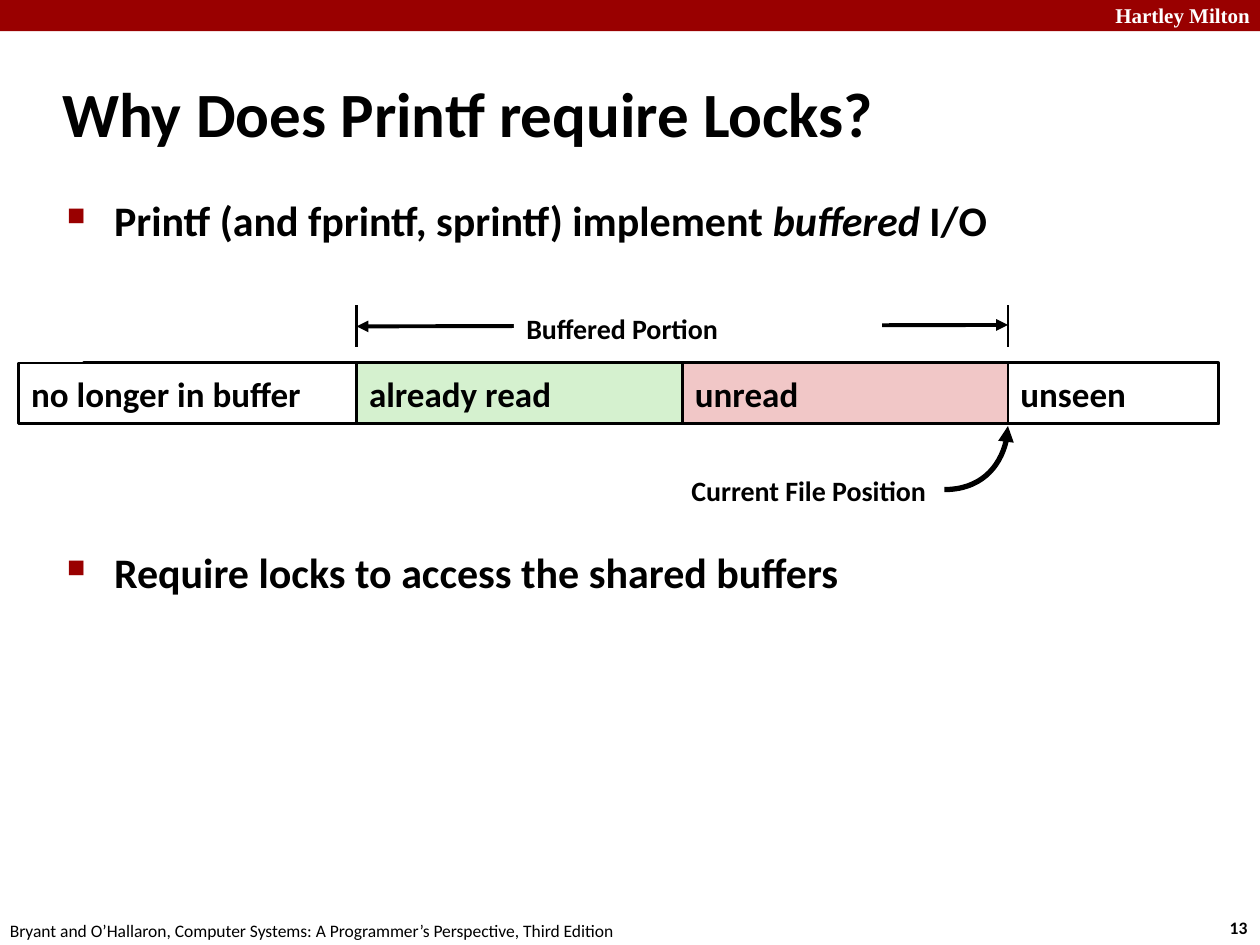
from dataclasses import dataclass
from typing import Optional

import pptx
import pptx.dml.color
import pptx.enum.shapes
import pptx.enum.text
import pptx.oxml
import pptx.oxml.ns
import pptx.util
from lxml import etree

Cm = pptx.util.Cm
Pt = pptx.util.Pt
qn = pptx.oxml.ns.qn
ALIGN = pptx.enum.text.PP_ALIGN
ANCHOR = pptx.enum.text.MSO_ANCHOR
RECTANGLE = pptx.enum.shapes.MSO_SHAPE.RECTANGLE

COLORS = {"red": "990000", "black": "000000", "white": "FFFFFF",
          "unread": "F1C7C7", "read": "D5F1CF"}
BUFFER_TOP, BUFFER_HEIGHT = 7.32, 1.22
EDGES = [0.38, 7.19, 13.76, 20.32, 24.56]


@dataclass
class Box:
    left: float
    top: float
    width: float
    height: float
    text: str = ""
    size: float = 20
    bold: bool = True
    color: str = "black"
    font: str = "Calibri"
    align: ALIGN = ALIGN.LEFT
    anchor: ANCHOR = ANCHOR.TOP
    wrap: bool = True
    fill: Optional[str] = None
    line: float = 0


@dataclass
class Line:
    start: tuple
    end: tuple
    width: float
    arrows: tuple = ()


def rgb(name: str) -> pptx.dml.color.RGBColor:
    return pptx.dml.color.RGBColor.from_string(COLORS[name])


def set_values(target, values: dict) -> None:
    for name, value in values.items():
        setattr(target, name, value)


def add_run(paragraph, text: str, size: float, color: str = "black",
            font: str = "Calibri", bold: bool = True, italic: bool = False) -> None:
    run = paragraph.add_run()
    run.text = text
    set_values(run.font, {"size": Pt(size), "name": font, "bold": bold, "italic": italic})
    run.font.color.rgb = rgb(color)


def set_line(shape, width: float, arrows: tuple = ()) -> None:
    shape.line.color.rgb = rgb("black")
    shape.line.width = Pt(width)
    for end in arrows:
        etree.SubElement(shape.line._get_or_add_ln(), qn(f"a:{end}"), type="triangle")


def draw_box(slide, box: Box):
    place = [Cm(v) for v in (box.left, box.top, box.width, box.height)]
    if box.fill or box.line:
        shape = slide.shapes.add_shape(RECTANGLE, *place)
        shape.shadow.inherit = False
        if box.fill:
            shape.fill.solid()
            shape.fill.fore_color.rgb = rgb(box.fill)
        else:
            shape.fill.background()
        if box.line:
            set_line(shape, box.line)
        else:
            shape.line.fill.background()
    else:
        shape = slide.shapes.add_textbox(*place)
    set_values(shape.text_frame, {"word_wrap": box.wrap, "vertical_anchor": box.anchor})
    if box.text:
        paragraph = shape.text_frame.paragraphs[0]
        paragraph.alignment = box.align
        add_run(paragraph, box.text, box.size, box.color, box.font, box.bold)
    return shape


def draw_line(slide, line: Line) -> None:
    points = [Cm(v) for v in (*line.start, *line.end)]
    connector = slide.shapes.add_connector(
        pptx.enum.shapes.MSO_CONNECTOR.STRAIGHT, *points)
    set_line(connector, line.width, line.arrows)
    etree.SubElement(connector._element.spPr, qn("a:effectLst"))


def draw_curve(slide, tip: tuple, radius: float) -> None:
    """Quarter arc from the arrow tip down and to the left."""
    x, y, r = Cm(tip[0]), Cm(tip[1]), Cm(radius)
    builder = slide.shapes.build_freeform(x, y)
    builder.add_line_segments([(x - r, y + r)], close=False)
    shape = builder.convert_to_shape()
    shape.shadow.inherit = False
    shape.fill.background()
    set_line(shape, 3, ("headEnd",))
    segment = next(shape._element.iter(qn("a:lnTo")))
    curve = etree.Element(qn("a:cubicBezTo"))
    for px, py in ((r, 0.55 * r), (0.55 * r, r), (0, r)):
        etree.SubElement(curve, qn("a:pt"), x=str(int(px)), y=str(int(py)))
    segment.getparent().replace(segment, curve)


def set_indent(paragraph, indent: float) -> None:
    properties = paragraph._p.get_or_add_pPr()
    properties.set("marL", str(Cm(indent)))
    properties.set("indent", str(-Cm(indent)))


def add_bullet(paragraph, runs: list, space_before: float) -> None:
    paragraph.space_before = Pt(space_before)
    set_indent(paragraph, 0.95)
    properties = paragraph._p.get_or_add_pPr()
    color = etree.SubElement(properties, qn("a:buClr"))
    etree.SubElement(color, qn("a:srgbClr"), val=COLORS["red"])
    etree.SubElement(properties, qn("a:buSzPct"), val="60000")
    etree.SubElement(properties, qn("a:buChar"), char="■")
    for text, italic in runs:
        add_run(paragraph, text, 24, italic=italic)


def main() -> None:
    presentation = pptx.Presentation()
    set_values(presentation, {"slide_width": Cm(25.4), "slide_height": Cm(19.05)})
    slide = presentation.slides.add_slide(presentation.slide_layouts[5])

    # Header and footer
    for box in (
        Box(0, 0, 25.4, 0.63, fill="red"),
        Box(21.95, -0.08, 3.5, 0.76, "Hartley Milton", 12, color="white",
            font="Times New Roman", align=ALIGN.RIGHT),
        Box(24.54, 18.36, 0.94, 0.69, "13", 10, wrap=False),
        Box(-0.05, 18.42, 12.9, 0.69, "Bryant and O’Hallaron, Computer Systems: "
            "A Programmer’s Perspective, Third Edition", 10, bold=False, wrap=False),
    ):
        draw_box(slide, box)

    # Title
    title = slide.shapes.title
    set_values(title, {"left": Cm(1), "top": Cm(1.22), "width": Cm(21.08), "height": Cm(2.1)})
    set_values(title.text_frame, {"vertical_anchor": ANCHOR.MIDDLE, "word_wrap": True})
    heading = title.text_frame.paragraphs[0]
    heading.alignment = ALIGN.LEFT
    set_indent(heading, 0.32)
    add_run(heading, "Why Does Printf require Locks?", 36)

    # Bullets, with room for the diagram between them
    body = draw_box(slide, Box(1.1, 3.8, 21.95, 1.93)).text_frame
    add_bullet(body.paragraphs[0], [("Printf (and fprintf, sprintf) implement ", False),
                                    ("buffered", True), (" I/O", False)], 0)
    add_bullet(body.add_paragraph(),
               [("Require locks to access the shared buffers", False)], 172)

    # Buffer: an outline and its four sections
    draw_box(slide, Box(1.7, BUFFER_TOP, 22.86, BUFFER_HEIGHT, line=2.25))
    sections = [("no longer in buffer", "white"), ("already read", "read"),
                ("unread", "unread"), ("unseen", "white")]
    for (text, fill), left, right in zip(sections, EDGES, EDGES[1:]):
        draw_box(slide, Box(left, BUFFER_TOP, right - left, BUFFER_HEIGHT, text,
                            anchor=ANCHOR.MIDDLE, fill=fill, line=1.5))

    # Current file position
    start, end = EDGES[1], EDGES[3]
    draw_curve(slide, (end, BUFFER_TOP + BUFFER_HEIGHT + 0.05), 1.28)
    draw_box(slide, Box(11.73, 9.42, 7.19, 0.94, "Current File Position", 16,
                        align=ALIGN.RIGHT))

    # Extent of the buffered portion
    for x in (start, end):
        draw_line(slide, Line((x, 6.99), (x, 6.15), 1.5))
    draw_line(slide, Line((start, 6.58), (end, 6.55), 2.25, ("headEnd", "tailEnd")))
    draw_box(slide, Box(10.36, 6.15, 7.42, 0.94, "Buffered Portion", 16, fill="white"))

    presentation.save("out.pptx")


if __name__ == "__main__":
    main()
